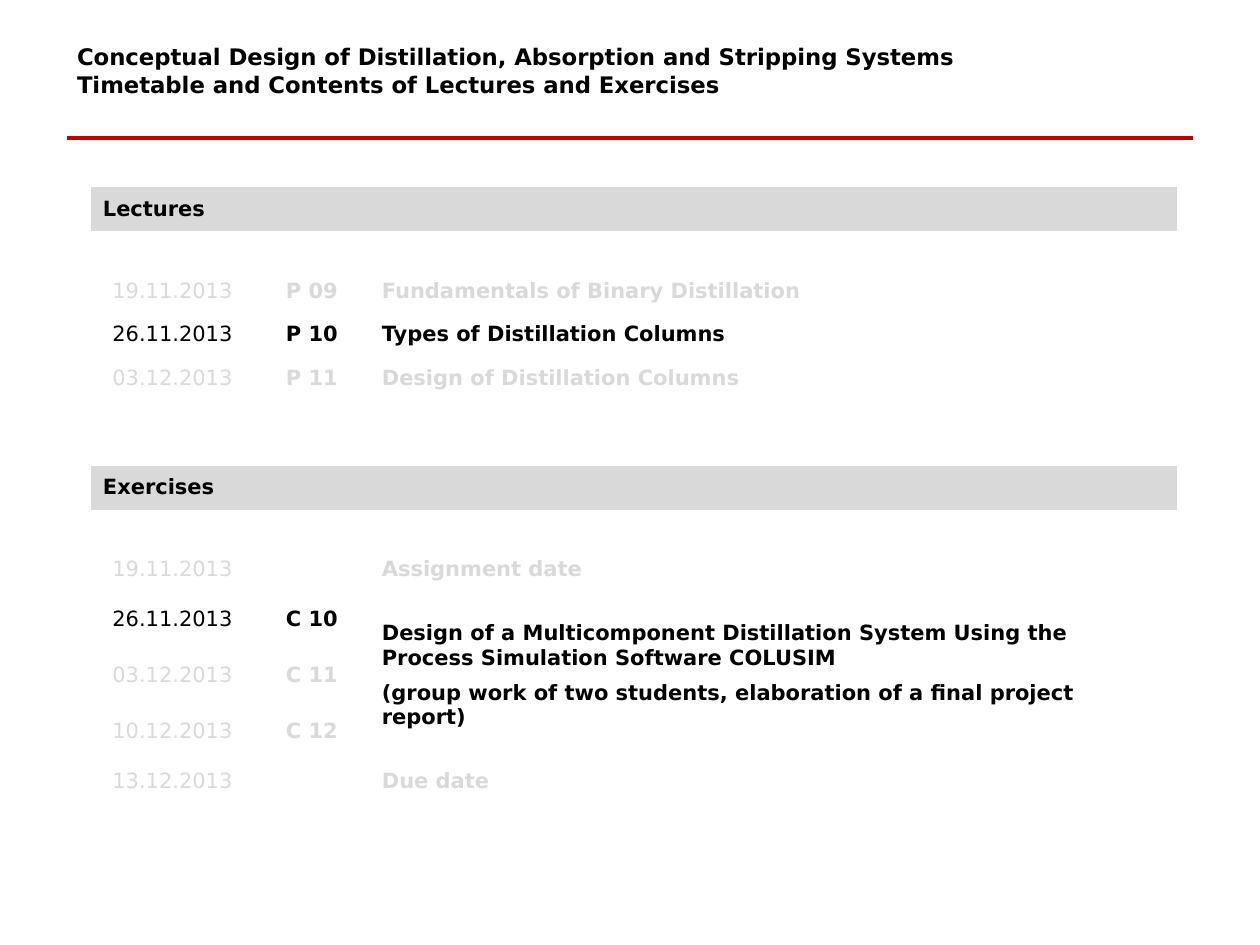
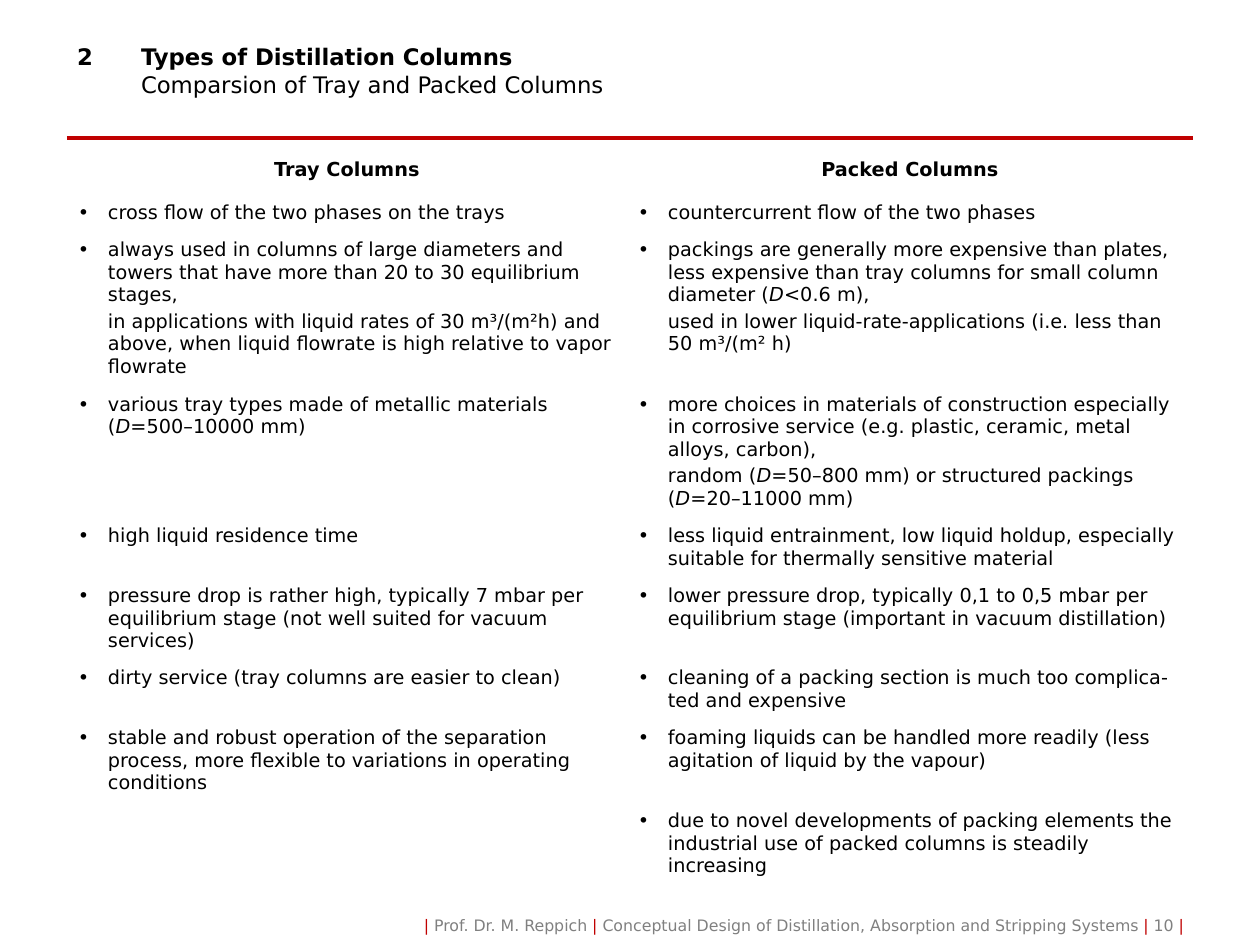
"""Builds two slides on distillation columns: a timetable and a comparison."""
from lxml.etree import SubElement as Sub
from pptx import Presentation
from pptx.dml.color import RGBColor as RGB
from pptx.enum.shapes import MSO_CONNECTOR as Link
from pptx.enum.text import MSO_ANCHOR as Anchor, PP_ALIGN as Align
from pptx.oxml.ns import qn
from pptx.util import Pt

PX = 914400 // 126
FONT = "DejaVu Sans"
BLACK, PALE, RED, GREY = "000000", "D9D9D9", "C00000", "808080"
PLAIN = "{2D5ABB26-0587-4C30-8999-92F81FD0307C}"
COURSE = "Conceptual Design of Distillation, Absorption and Stripping Systems"

TITLES = [
    [(COURSE, True), ("Timetable and Contents of Lectures and Exercises", True)],
    [("2\tTypes of Distillation Columns", True),
     ("\tComparsion of Tray and Packed Columns", False)],
]
FOOTER = ["Prof. Dr. M. Reppich", COURSE, "10"]

PLAN_COLS = [163, 116, 247, 560]
BAND, GAP, ITEM, BREAK, TASK = 44, 37, 44, 65, 56
PLAN = [
    (BAND, ["Lectures"], True),
    (GAP, [], False),
    (ITEM, ["19.11.2013", "P 09", "Fundamentals of Binary Distillation"], False),
    (ITEM, ["26.11.2013", "P 10", "Types of Distillation Columns"], True),
    (ITEM, ["03.12.2013", "P 11", "Design of Distillation Columns"], False),
    (BREAK, [], False),
    (BAND, ["Exercises"], True),
    (GAP, [], False),
    (ITEM, ["19.11.2013", "", "Assignment date"], False),
    (TASK, ["26.11.2013", "C 10",
            "Design of a Multicomponent Distillation System Using the Process "
            "Simulation Software COLUSIM\n"
            "(group work of two students, elaboration of a final project report)"], True),
    (TASK, ["03.12.2013", "C 11"], False),
    (TASK, ["10.12.2013", "C 12"], False),
    (ITEM, ["13.12.2013", "", "Due date"], False),
]

TYPE_COLS = [39, 521, 39, 527]
HEADS = (48, "Tray Columns", "Packed Columns")
TYPES = [
    (37, "cross flow of the two phases on the trays",
     "countercurrent flow of the two phases"),
    (154, "always used in columns of large diameters and towers that have more "
     "than 20 to 30 equilibrium stages,\n"
     "in applications with liquid rates of 30 m³/(m²h) and above, when liquid "
     "flowrate is high relative to vapor flowrate",
     "packings are generally more expensive than plates, less expensive than "
     "tray columns for small column diameter (*D*<0.6 m),\n"
     "used in lower liquid-rate-applications (i.e. less than 50 m³/(m² h)"),
    (131, "various tray types made of metallic materials (*D*=500–10000 mm)",
     "more choices in materials of construction especially in corrosive service "
     "(e.g. plastic, ceramic, metal alloys, carbon),\n"
     "random (*D*=50–800 mm) or structured packings (*D*=20–11000 mm)"),
    (60, "high liquid residence time",
     "less liquid entrainment, low liquid holdup, especially suitable for "
     "thermally sensitive material"),
    (82, "pressure drop is rather high, typically 7 mbar per equilibrium stage "
     "(not well suited for vacuum services)",
     "lower pressure drop, typically 0,1 to 0,5 mbar per equilibrium stage "
     "(important in vacuum distillation)"),
    (60, "dirty service (tray columns are easier to clean)",
     "cleaning of a packing section is much too complica-ted and expensive"),
    (83, "stable and robust operation of the separation process, more flexible "
     "to variations in operating conditions",
     "foaming liquids can be handled more readily (less agitation of liquid by "
     "the vapour)"),
    (82, "", "due to novel developments of packing elements the industrial use "
     "of packed columns is steadily increasing"),
]


def px(*nums):
    return [n * PX for n in nums]


def hue(code):
    return RGB.from_string(code)


def style(par, size, color=BLACK, bold=False, align=Align.LEFT):
    par.alignment = align
    font = par.font
    font.name, font.size, font.bold = FONT, Pt(size), bold
    font.color.rgb = hue(color)


def inset(part, left, top, right, low):
    (part.margin_left, part.margin_top,
     part.margin_right, part.margin_bottom) = px(left, top, right, low)


def add_box(slide, place, pad, anchor):
    frame = slide.shapes.add_textbox(*px(*place)).text_frame
    frame.word_wrap = True
    frame.vertical_anchor = anchor
    inset(frame, *pad)
    return frame.paragraphs[0]


def add_title(slide, lines):
    par = add_box(slide, (67, 38, 1130, 100), (10, 5, 10, 5), Anchor.TOP)
    tabs = Sub(par._p.get_or_add_pPr(), qn("a:tabLst"))
    Sub(tabs, qn("a:tab"), pos=str(64 * PX), algn="l")
    style(par, 13)
    for i, (text, bold) in enumerate(lines):
        if i:
            par.add_line_break()
        run = par.add_run()
        run.text, run.font.bold = text, bold


def add_rule(slide):
    rule = slide.shapes.add_connector(Link.STRAIGHT, *px(67, 138, 1193, 138))
    rule.line.color.rgb = hue(RED)
    rule.line.width = Pt(2.25)
    Sub(rule.element.spPr, qn("a:effectLst"))


def add_footer(slide):
    par = add_box(slide, (49, 891, 1148, 50), (13, 6, 13, 6), Anchor.BOTTOM)
    style(par, 9, align=Align.RIGHT)
    parts = [pair for text in FOOTER for pair in (("| ", RED), (text + " ", GREY))]
    for text, color in parts + [("|", RED)]:
        run = par.add_run()
        run.text, run.font.color.rgb = text, hue(color)


def add_grid(slide, left, top, cols, rows):
    place = px(left, top, sum(cols), sum(rows))
    shape = slide.shapes.add_table(len(rows), len(cols), *place)
    grid = shape.table
    grid.first_row = grid.horz_banding = False
    next(shape.element.iter(qn("a:tableStyleId"))).text = PLAIN
    for col, wide in zip(grid.columns, cols):
        col.width = wide * PX
    for row, high in zip(grid.rows, rows):
        row.height = high * PX
        for cell in row.cells:
            cell.fill.background()
            inset(cell, 0, 0, 0, 0)
    return grid


def fill_cell(cell, text, pad, anchor, size, gap=0, **look):
    inset(cell, *pad)
    cell.vertical_anchor = anchor
    frame = cell.text_frame
    for i, line in enumerate(text.split("\n")):
        par = frame.add_paragraph() if i else frame.paragraphs[0]
        style(par, size, **look)
        if i:
            par.space_before = Pt(gap)
        for j, bit in enumerate(line.split("*")):
            run = par.add_run()
            run.text = bit
            if j % 2:
                run.font.italic = True


def add_dot(cell):
    props = cell.text_frame.paragraphs[0]._p.get_or_add_pPr()
    props.set("marL", str(16 * PX))
    props.set("indent", str(-16 * PX))
    Sub(props, qn("a:buFont"), typeface=FONT)
    Sub(props, qn("a:buChar"), char="•")
    fill_cell(cell, " ", (11, 2, 2, 10), Anchor.TOP, 11)


def add_plan(slide):
    grid = add_grid(slide, 91, 187, PLAN_COLS, [row[0] for row in PLAN])
    for r, (high, texts, live) in enumerate(PLAN):
        band = len(texts) == 1
        if band:
            grid.cell(r, 0).merge(grid.cell(r, 3))
            for c in range(4):
                grid.cell(r, c).fill.solid()
                grid.cell(r, c).fill.fore_color.rgb = hue(PALE)
        elif len(texts) == 3 and texts[1]:
            last = r + 2 if high == TASK else r
            grid.cell(r, 2).merge(grid.cell(last, 3))
        for c, text in enumerate(texts):
            if text:
                mid = c < 2 and not band
                fill_cell(grid.cell(r, c), text, (12, 9, 12, 9), Anchor.MIDDLE, 12,
                          gap=6, color=BLACK if live else PALE, bold=band or c > 0,
                          align=Align.CENTER if mid else Align.LEFT)


def add_types(slide):
    high, *heads = HEADS
    grid = add_grid(slide, 67, 152, TYPE_COLS, [high] + [row[0] for row in TYPES])
    for c, head in zip((0, 2), heads):
        grid.cell(0, c).merge(grid.cell(0, c + 1))
        fill_cell(grid.cell(0, c), head, (13, 6, 13, 19), Anchor.MIDDLE, 11,
                  bold=True, align=Align.CENTER)
    for r, (_, *texts) in enumerate(TYPES, 1):
        for c, text in zip((0, 2), texts):
            if text:
                add_dot(grid.cell(r, c))
                fill_cell(grid.cell(r, c + 1), text, (2, 2, 2, 10), Anchor.TOP, 11, gap=2.2)


def main():
    deck = Presentation()
    deck.slide_width, deck.slide_height = px(1260, 945)
    for title, bodies in zip(TITLES, ([add_plan], [add_types, add_footer])):
        slide = deck.slides.add_slide(deck.slide_layouts[6])
        add_rule(slide)
        add_title(slide, title)
        for body in bodies:
            body(slide)
    deck.save("out.pptx")


if __name__ == "__main__":
    main()
